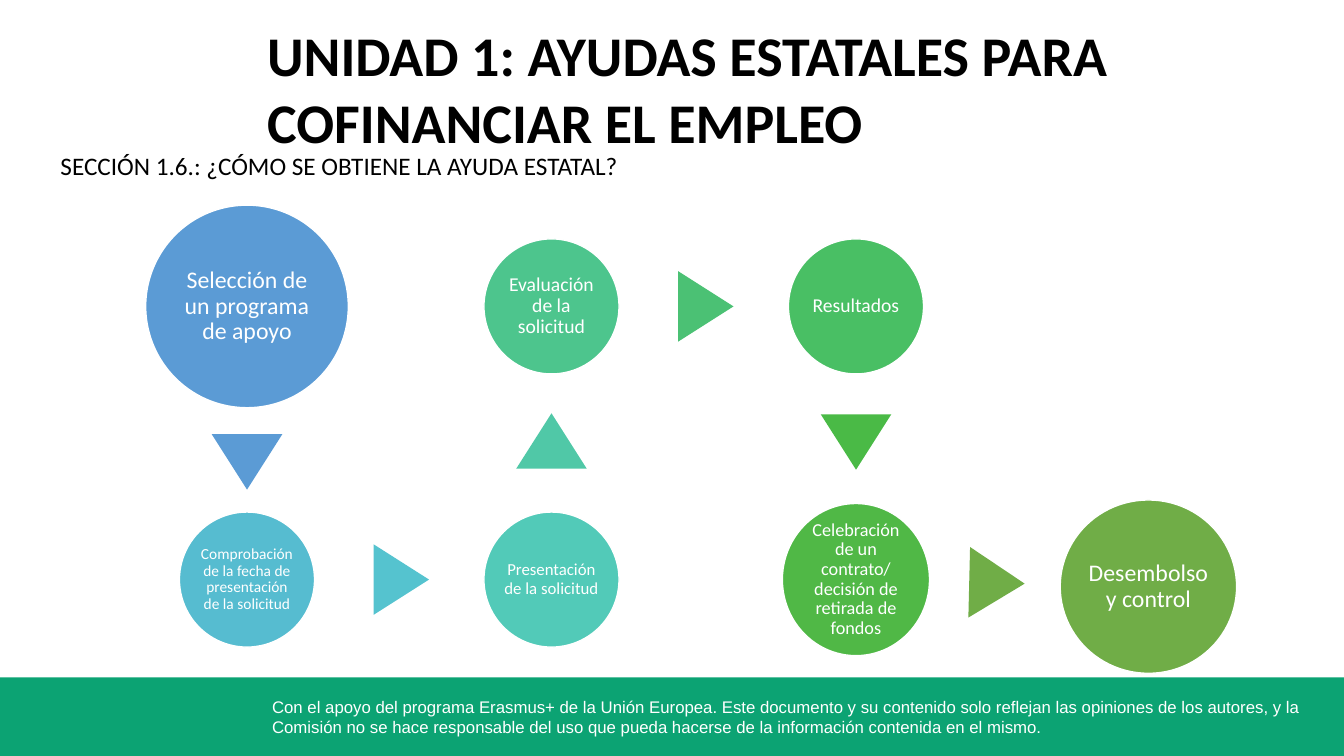
import math
from dataclasses import dataclass

from pptx import Presentation, util as u
from pptx.dml.color import RGBColor
from pptx.enum import shapes, text

PX = 9144  # 100 px to the inch


@dataclass(frozen=True)
class Theme:
    font: str = "Calibri"
    footer_font: str = "Arial"
    ink: str = "000000"
    paper: str = "FFFFFF"
    band: str = "0CA373"
    title_size: int = 40
    section_size: int = 18
    footer_size: int = 12


THEME = Theme()

# Steps in order: label, column, row, width, height, size, fill, colour of the arrow leaving it
STEPS = [
    ("Selección de un programa de apoyo", 0, 0, 201, 201, 17, "5B9BD5", "5B9BD5"),
    ("Comprobación de la fecha de presentación de la solicitud", 0, 1, 134, 134, 11, "56BCD0", "55C3CF"),
    ("Presentación de la solicitud", 1, 1, 134, 134, 12, "52CAB8", "50C8A7"),
    ("Evaluación de la solicitud", 1, 0, 134, 134, 14, "4DC58D", "4BC174"),
    ("Resultados", 2, 0, 134, 134, 14, "49BF64", "4ABA46"),
    ("Celebración de un contrato/ decisión de retirada de fondos", 2, 1, 146, 151, 13, "50B846", "70AD47"),
    ("Desembolso y control", 3, 2, 175, 172, 17, "70AD47", None),
]
COLUMN_CENTERS = [100, 402, 704, 994]
ROW_CENTERS = [101, 372, 379]


def px(*lengths):
    return [u.Emu(round(length * PX)) for length in lengths]


def write(shape, words, size, color, font=THEME.font, bold=False, margins=(10, 5, 10, 5),
          align=text.PP_ALIGN.LEFT, anchor=text.MSO_ANCHOR.TOP, spacing=1.0):
    frame = shape.text_frame
    frame.word_wrap = True
    frame.auto_size = text.MSO_AUTO_SIZE.NONE
    frame.vertical_anchor = anchor
    (frame.margin_left, frame.margin_top,
     frame.margin_right, frame.margin_bottom) = px(*margins)
    paragraph = frame.paragraphs[0]
    paragraph.alignment = align
    paragraph.line_spacing = spacing
    paragraph.space_before = u.Pt(0)
    run = paragraph.add_run()
    run.text = words
    run.font.name = font
    run.font.size = u.Pt(size)
    run.font.bold = bold
    run.font.color.rgb = RGBColor.from_string(color)


def add_filled(slide, kind, box, fill):
    shape = slide.shapes.add_shape(kind, *px(*box))
    shape.shadow.inherit = False
    shape.fill.solid()
    shape.fill.fore_color.rgb = RGBColor.from_string(fill)
    shape.line.fill.background()
    return shape


def add_footer(slide, left, top, width, height):
    add_filled(slide, shapes.MSO_SHAPE.RECTANGLE, (left, top, width, height), THEME.band)
    note = slide.shapes.add_textbox(*px(left + 260, top + 14, width - 291, height - 28))
    write(note, "Con el apoyo del programa Erasmus+ de la Unión Europea. Este documento y su "
          "contenido solo reflejan las opiniones de los autores, y la Comisión no se hace "
          "responsable del uso que pueda hacerse de la información contenida en el mismo.",
          THEME.footer_size, THEME.paper, THEME.footer_font)


def add_heading(slide, left, top, width, height):
    title = slide.shapes.title
    title.left, title.top, title.width, title.height = px(left + 216, top, width - 216, height)
    write(title, "UNIDAD 1: AYUDAS ESTATALES PARA COFINANCIAR EL EMPLEO",
          THEME.title_size, THEME.ink, bold=True, margins=(0, 1, 0, 0))
    section = slide.shapes.add_textbox(*px(left, top + 125, 666, 40))
    write(section, "SECCIÓN 1.6.: ¿CÓMO SE OBTIENE LA AYUDA ESTATAL?",
          THEME.section_size, THEME.ink, margins=(11, 5, 10, 5))


def add_arrow(slide, start, end, start_radius, end_radius, fill):
    """Place a triangle midway in the gap between two circles, pointing along the flow."""
    width, height, lead = 70, 55, 2
    angle = math.atan2(end[1] - start[1], end[0] - start[0])
    reach = (start_radius + math.dist(start, end) - end_radius) / 2 + lead
    x = start[0] + reach * math.cos(angle)
    y = start[1] + reach * math.sin(angle)
    arrow = add_filled(slide, shapes.MSO_SHAPE.ISOSCELES_TRIANGLE,
                       (x - width / 2, y - height / 2, width, height), fill)
    arrow.rotation = math.degrees(angle) + 90


def add_flow(slide, left, top):
    centers = [(left + COLUMN_CENTERS[step[1]], top + ROW_CENTERS[step[2]]) for step in STEPS]

    # Circles, whose labels use the full width of the inner text area
    for (x, y), (label, _, _, width, height, size, fill, _) in zip(centers, STEPS):
        circle = add_filled(slide, shapes.MSO_SHAPE.OVAL,
                            (x - width / 2, y - height / 2, width, height), fill)
        circle.line.color.rgb = RGBColor.from_string(THEME.paper)
        circle.line.width = u.Pt(1)
        write(circle, label, size, THEME.paper, margins=(0, 2, 0, 2), spacing=0.9,
              align=text.PP_ALIGN.CENTER, anchor=text.MSO_ANCHOR.MIDDLE)

    # Arrows from each step to the next
    for i, (step, following) in enumerate(zip(STEPS, STEPS[1:])):
        add_arrow(slide, centers[i], centers[i + 1], step[3] / 2, following[3] / 2, step[7])


def main():
    presentation = Presentation()
    presentation.slide_width, presentation.slide_height = px(1333, 750)
    title_only = presentation.slide_layouts[5]
    slide = presentation.slides.add_slide(title_only)
    add_footer(slide, 0, 672, 1333, 78)
    add_flow(slide, 145, 203)
    add_heading(slide, 49, 19, 1113, 69)
    presentation.save("out.pptx")


if __name__ == "__main__":
    main()
